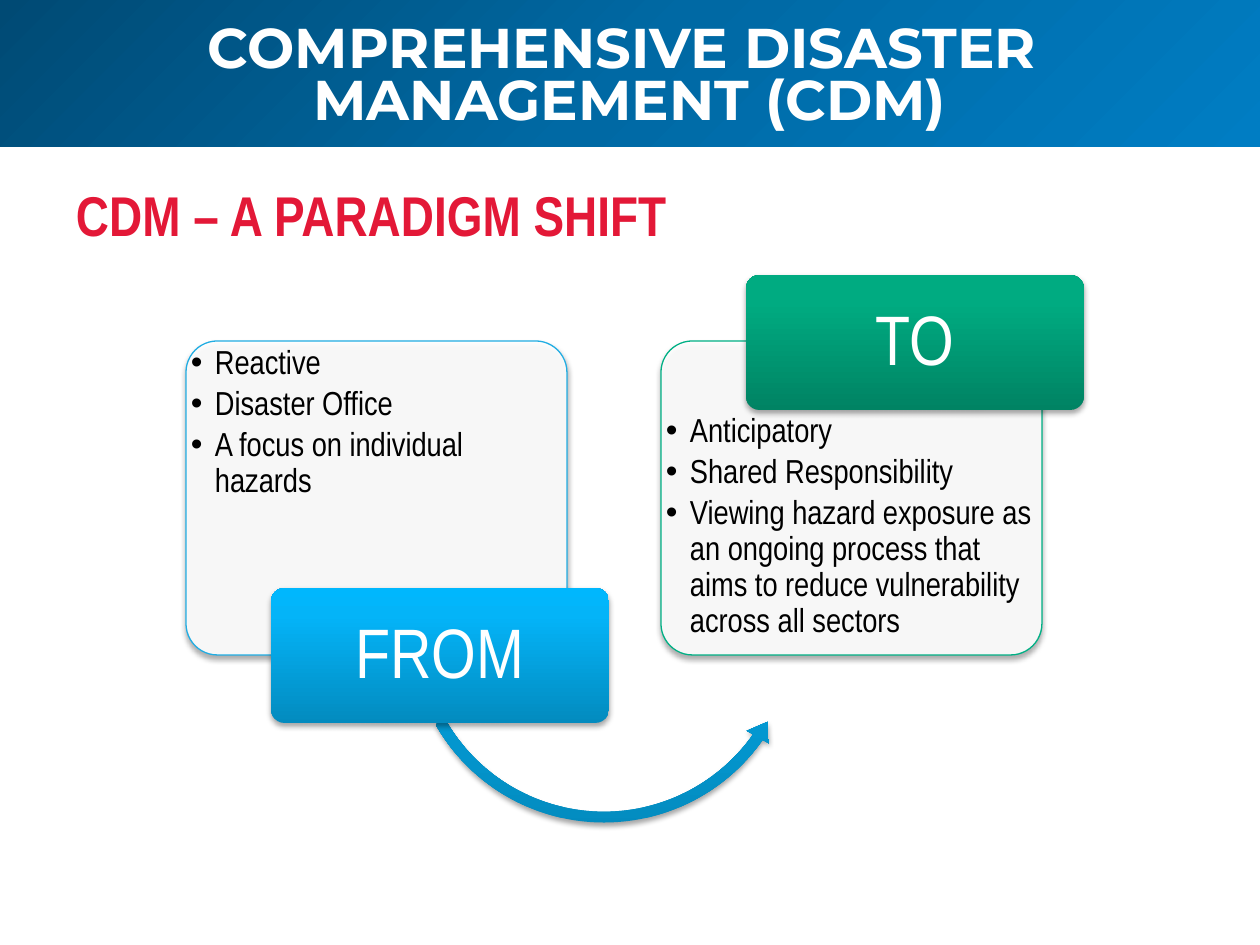
from dataclasses import dataclass

import pptx
import pptx.dml.color
import pptx.enum.shapes
import pptx.enum.text
import pptx.oxml.ns
import pptx.util
from lxml import etree

EMU_PER_PX = 914400 / 126
SHAPE = pptx.enum.shapes.MSO_SHAPE
ALIGN = pptx.enum.text.PP_ALIGN
ANCHOR = pptx.enum.text.MSO_ANCHOR
Pt = pptx.util.Pt
qn = pptx.oxml.ns.qn

COLORS = {
    "white": "FFFFFF", "black": "000000", "red": "E31837",
    "navy": "004A74", "ocean": "0069A4", "azure": "007DC3",
    "blue_line": "21ADE3", "blue_dark": "038BBF", "blue_mid": "04B4F8", "blue_light": "00B7FD",
    "green_line": "00B085", "green_dark": "008363", "green_light": "00AB81",
}
HEADER_STOPS = ((0, "navy"), (50, "ocean"), (100, "azure"))
BLUE_STOPS = ((0, "blue_dark"), (80, "blue_mid"), (100, "blue_light"))
GREEN_STOPS = ((0, "green_dark"), (80, "green_light"), (100, "green_light"))


@dataclass(frozen=True)
class Box:
    left: int
    top: int
    width: int
    height: int

    def emu(self) -> list[int]:
        return [px(n) for n in (self.left, self.top, self.width, self.height)]


@dataclass(frozen=True)
class Stage:
    """One side of the shift: a bulleted panel with an overlapping badge."""
    name: str
    left: int
    badge_top: int
    text_top: int
    line: str
    stops: tuple
    points: tuple


PANEL_TOP, PANEL_WIDTH, PANEL_HEIGHT = 341, 381, 314
BADGE_OFFSET, BADGE_WIDTH, BADGE_HEIGHT = 85, 338, 135
FROM = Stage("FROM", 186, 588, PANEL_TOP, "blue_line", BLUE_STOPS,
             ("Reactive", "Disaster Office", "A focus on individual hazards"))
TO = Stage("TO", 661, 275, 409, "green_line", GREEN_STOPS,
           ("Anticipatory", "Shared Responsibility",
            "Viewing hazard exposure as an ongoing process that aims to reduce "
            "vulnerability across all sectors"))


def px(length: int) -> int:
    return round(length * EMU_PER_PX)


def rgb(name: str) -> pptx.dml.color.RGBColor:
    return pptx.dml.color.RGBColor.from_string(COLORS[name])


def add_color(parent, name: str, alpha: int = 100) -> None:
    color = etree.SubElement(parent, qn("a:srgbClr"), val=COLORS[name])
    if alpha < 100:
        etree.SubElement(color, qn("a:alpha"), val=str(alpha * 1000))


def add_plain_shape(slide, kind, box: Box, adjustments: tuple = ()):
    shape = slide.shapes.add_shape(kind, *box.emu())
    shape.shadow.inherit = False
    shape.line.fill.background()
    for index, value in enumerate(adjustments):
        shape.adjustments[index] = value
    return shape


def fill_gradient(shape, stops: tuple, angle: int) -> None:
    """Fill with colour stops; the angle runs counter-clockwise."""
    shape.fill.gradient()
    shape.fill.gradient_angle = angle
    stop_list = next(shape.element.spPr.iter(qn("a:gsLst")))
    for old in list(stop_list):
        stop_list.remove(old)
    for percent, name in stops:
        add_color(etree.SubElement(stop_list, qn("a:gs"), pos=str(percent * 1000)), name)


def drop_shadow(shape) -> None:
    effects = shape.element.spPr.find(qn("a:effectLst"))
    shadow = etree.SubElement(effects, qn("a:outerShdw"), blurRad=str(Pt(3.1)),
                              dist=str(Pt(1.8)), dir="5400000", rotWithShape="0")
    add_color(shadow, "black", 35)


def format_frame(frame, anchor, inset_x: int, inset_y: int) -> None:
    formats = {"word_wrap": True, "vertical_anchor": anchor,
               "auto_size": pptx.enum.text.MSO_AUTO_SIZE.NONE,
               "margin_left": px(inset_x), "margin_right": px(inset_x),
               "margin_top": px(inset_y), "margin_bottom": px(inset_y)}
    for name, value in formats.items():
        setattr(frame, name, value)


def write(paragraph, text: str, size: int, color: str, align, spacing,
          font: str = "Arial Narrow", bold: bool = False) -> None:
    paragraph.text = text
    paragraph.alignment = align
    paragraph.line_spacing = spacing
    for name, value in {"name": font, "size": Pt(size), "bold": bold}.items():
        setattr(paragraph.font, name, value)
    paragraph.font.color.rgb = rgb(color)


def add_bullet(paragraph) -> None:
    properties = paragraph._p.get_or_add_pPr()
    properties.set("marL", str(px(24)))
    properties.set("indent", str(-px(24)))
    etree.SubElement(properties, qn("a:buFont"), typeface="Arial")
    etree.SubElement(properties, qn("a:buChar"), char="•")


def add_panel(slide, stage: Stage) -> None:
    panel = add_plain_shape(slide, SHAPE.ROUNDED_RECTANGLE,
                            Box(stage.left, PANEL_TOP, PANEL_WIDTH, PANEL_HEIGHT), (0.1,))
    panel.fill.solid()
    panel.fill.fore_color.rgb = rgb("white")
    fill_color = panel.element.spPr.find(qn("a:solidFill")).find(qn("a:srgbClr"))
    etree.SubElement(fill_color, qn("a:alpha"), val="90000")
    panel.line.color.rgb = rgb(stage.line)
    panel.line.width = Pt(0.75)
    drop_shadow(panel)

    points = slide.shapes.add_textbox(
        *Box(stage.left, stage.text_top, PANEL_WIDTH, 247).emu()).text_frame
    format_frame(points, ANCHOR.TOP, 5, 5)
    for index, point in enumerate(stage.points):
        paragraph = points.add_paragraph() if index else points.paragraphs[0]
        add_bullet(paragraph)
        write(paragraph, point, 19, "black", ALIGN.LEFT, 0.9)
        paragraph.space_after = Pt(2.85)


def add_badge(slide, stage: Stage) -> None:
    badge = add_plain_shape(
        slide, SHAPE.ROUNDED_RECTANGLE,
        Box(stage.left + BADGE_OFFSET, stage.badge_top, BADGE_WIDTH, BADGE_HEIGHT), (0.1,))
    fill_gradient(badge, stage.stops, 90)
    drop_shadow(badge)
    format_frame(badge.text_frame, ANCHOR.MIDDLE, 10, 8)
    write(badge.text_frame.paragraphs[0], stage.name, 40, "white", ALIGN.CENTER, 0.9)


def add_shift_arrow(slide) -> None:
    arrow = add_plain_shape(slide, SHAPE.LEFT_CIRCULAR_ARROW, Box(403, 428, 402, 402),
                            (0.027, 3.308, 21.063, 90.245, 0.032))
    fill_gradient(arrow, BLUE_STOPS, 90)
    drop_shadow(arrow)


def add_header(slide) -> None:
    band = add_plain_shape(slide, SHAPE.RECTANGLE, Box(0, 0, 1260, 147))
    fill_gradient(band, HEADER_STOPS, 315)
    heading = slide.shapes.add_textbox(*Box(0, 21, 1260, 136).emu()).text_frame
    format_frame(heading, ANCHOR.TOP, 13, 6)
    write(heading.paragraphs[0], "COMPREHENSIVE DISASTER \nMANAGEMENT (CDM)", 32, "white",
          ALIGN.CENTER, Pt(30), font="Montserrat", bold=True)


def place_title(slide) -> None:
    title = slide.shapes.title
    title.left, title.top, title.width, title.height = Box(63, 189, 1081, 73).emu()
    format_frame(title.text_frame, ANCHOR.TOP, 13, 6)
    write(title.text_frame.paragraphs[0], "CDM – A PARADIGM SHIFT", 32, "red",
          ALIGN.LEFT, Pt(30), bold=True)


def main() -> None:
    deck = pptx.Presentation()
    deck.slide_width, deck.slide_height = px(1260), px(945)
    slide = deck.slides.add_slide(deck.slide_layouts.get_by_name("Title Only"))
    add_header(slide)
    place_title(slide)
    add_panel(slide, FROM)
    add_shift_arrow(slide)
    add_badge(slide, FROM)
    add_panel(slide, TO)
    add_badge(slide, TO)
    deck.save("out.pptx")


if __name__ == "__main__":
    main()
